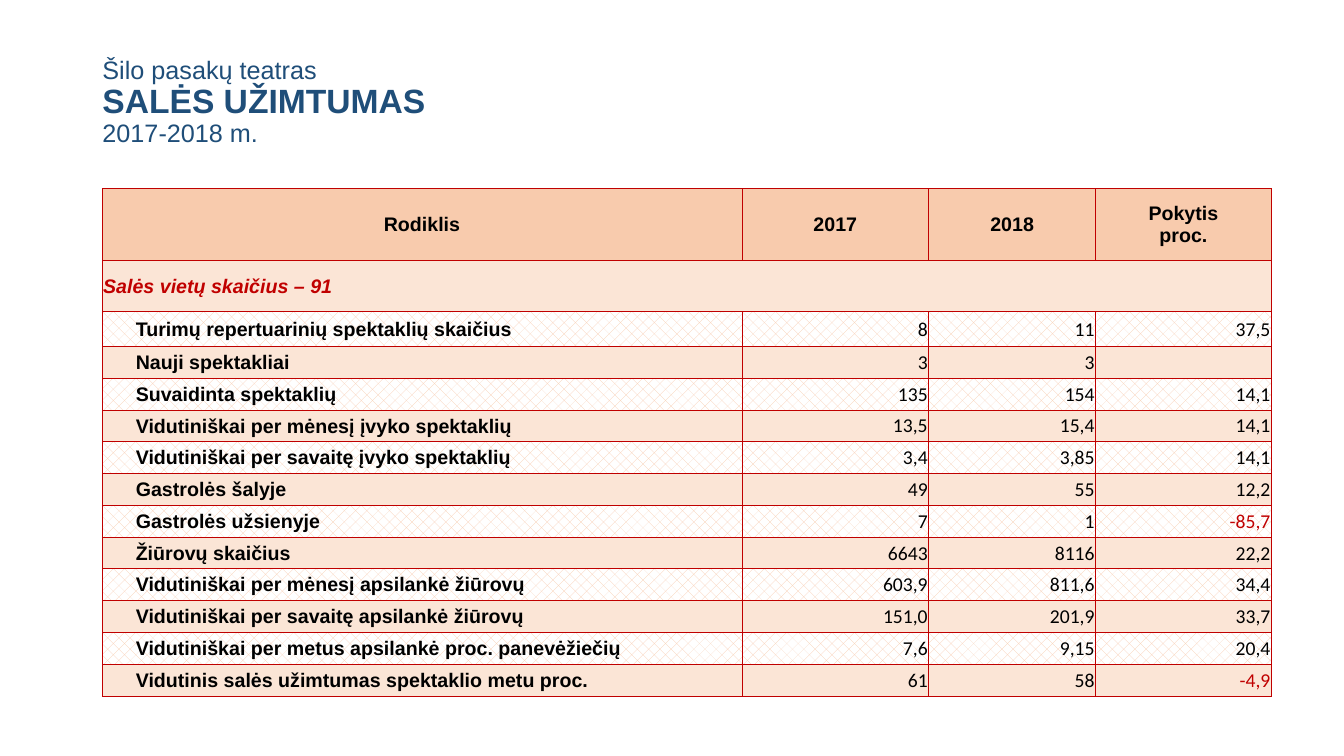
from lxml import etree
from pptx import Presentation
from pptx.dml.color import RGBColor
from pptx.enum.dml import MSO_PATTERN
from pptx.enum.text import MSO_ANCHOR, MSO_AUTO_SIZE, PP_ALIGN
from pptx.oxml.ns import qn
from pptx.util import Pt

BLUE, RED, BLACK, WHITE = "1F4E79", "C00000", "000000", "FFFFFF"
PEACH, PALE = "F8CBAD", "FBE5D6"
INDENT = 23.3

TITLE = [
    ("Šilo pasakų teatras", 18, False),
    ("SALĖS UŽIMTUMAS", 24, True),
    ("2017-2018 m.", 18, False),
]
HEAD = ["Rodiklis", "2017", "2018", "Pokytis\nproc."]
SEATS = "Salės vietų skaičius – 91"
ROWS = [
    ("Turimų repertuarinių spektaklių skaičius", "8", "11", "37,5"),
    ("Nauji spektakliai", "3", "3", ""),
    ("Suvaidinta spektaklių", "135", "154", "14,1"),
    ("Vidutiniškai per mėnesį įvyko spektaklių", "13,5", "15,4", "14,1"),
    ("Vidutiniškai per savaitę įvyko spektaklių", "3,4", "3,85", "14,1"),
    ("Gastrolės šalyje", "49", "55", "12,2"),
    ("Gastrolės užsienyje", "7", "1", "-85,7"),
    ("Žiūrovų skaičius", "6643", "8116", "22,2"),
    ("Vidutiniškai per mėnesį apsilankė žiūrovų", "603,9", "811,6", "34,4"),
    ("Vidutiniškai per savaitę apsilankė žiūrovų", "151,0", "201,9", "33,7"),
    ("Vidutiniškai per metus apsilankė proc. panevėžiečių", "7,6", "9,15", "20,4"),
    ("Vidutinis salės užimtumas spektaklio metu proc.", "61", "58", "-4,9"),
]
WIDTHS = [457, 133.4, 119.2, 125.6]
HEIGHTS = [51.3, 36.4, 24.9] + [22.73] * (len(ROWS) - 1)


def color(code):
    return RGBColor.from_string(code)


class Board:
    def __init__(self, slide, face="Arial", size=14):
        self.slide, self.face, self.size = slide, face, size

    def style(self, par, tint, size=None, bold=False, italic=False, face=None,
              align=PP_ALIGN.LEFT):
        font = par.font
        font.name, font.size = face or self.face, Pt(size or self.size)
        font.bold, font.italic = bold, italic
        font.color.rgb = color(tint)
        par.alignment = align

    def title(self, lines, left, top, width, height):
        shape = self.slide.shapes.title
        shape.left, shape.top = Pt(left), Pt(top)
        shape.width, shape.height = Pt(width), Pt(height)
        frame = shape.text_frame
        frame.word_wrap, frame.auto_size = True, MSO_AUTO_SIZE.NONE
        frame.vertical_anchor = MSO_ANCHOR.MIDDLE
        frame.text = "\n".join(text for text, _, _ in lines)
        for par, (_, size, bold) in zip(frame.paragraphs, lines):
            self.style(par, BLUE, size, bold)
            par.line_spacing = 0.9

    def table(self, left, top, widths, heights):
        frame = self.slide.shapes.add_table(
            len(heights), len(widths), Pt(left), Pt(top),
            Pt(sum(widths)), Pt(sum(heights)))
        table = frame.table
        table.first_row = table.horz_banding = False
        for col, width in zip(table.columns, widths):
            col.width = Pt(width)
        for row, height in zip(table.rows, heights):
            row.height = Pt(height)
        return table

    def cell(self, cell, text, back, tint=BLACK, indent=0, **look):
        """Fill and frame a cell; without a back colour it gets a pattern."""
        cell.text = text
        cell.vertical_anchor = MSO_ANCHOR.MIDDLE
        cell.margin_left = Pt(0.7 + indent)
        cell.margin_right = cell.margin_top = Pt(0.7)
        cell.margin_bottom = 0
        for par in cell.text_frame.paragraphs:
            self.style(par, tint, **look)
        if back:
            cell.fill.solid()
            cell.fill.fore_color.rgb = color(back)
        else:
            cell.fill.patterned()
            cell.fill.pattern = MSO_PATTERN.PERCENT_25
            cell.fill.fore_color.rgb = color(PEACH)
            cell.fill.back_color.rgb = color(WHITE)
        self.frame(cell)

    def frame(self, cell):
        """Draw thin red borders on all four sides."""
        props = cell._tc.get_or_add_tcPr()
        for spot, side in enumerate("LRTB"):
            line = etree.Element(qn("a:ln" + side), w=str(Pt(0.5)))
            fill = etree.SubElement(line, qn("a:solidFill"))
            etree.SubElement(fill, qn("a:srgbClr"), val=RED)
            props.insert(spot, line)


def main():
    deck = Presentation()
    deck.slide_width, deck.slide_height = Pt(960), Pt(540)
    board = Board(deck.slides.add_slide(deck.slide_layouts[5]))
    board.title(TITLE, 66, 28.8, 828, 89.4)

    table = board.table(73, 134.8, WIDTHS, HEIGHTS)
    for col, text in enumerate(HEAD):
        board.cell(table.cell(0, col), text, PEACH, bold=True, align=PP_ALIGN.CENTER)
        board.cell(table.cell(1, col), "" if col else SEATS, PALE, RED,
                   bold=True, italic=True)
    table.cell(1, 0).merge(table.cell(1, len(HEAD) - 1))

    for row, (label, *values) in enumerate(ROWS, 2):
        back = PALE if row % 2 else None
        board.cell(table.cell(row, 0), label, back, indent=INDENT, bold=True)
        for col, value in enumerate(values, 1):
            tint = RED if value.startswith("-") else BLACK
            board.cell(table.cell(row, col), value, back, tint,
                       face="Calibri", align=PP_ALIGN.RIGHT)
    deck.save("out.pptx")


if __name__ == "__main__":
    main()
